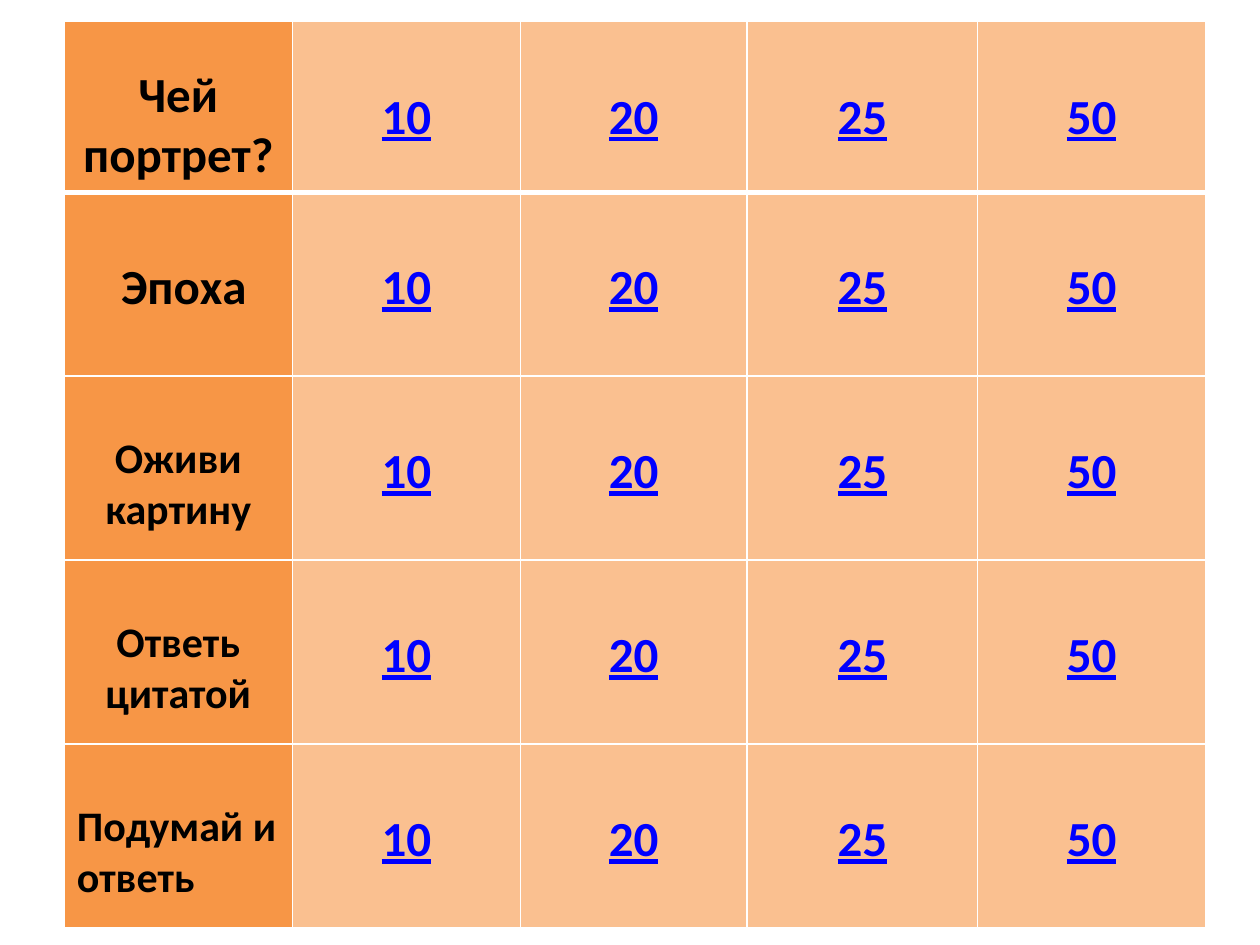
from lxml.etree import SubElement
from pptx import Presentation
from pptx.dml.color import RGBColor
from pptx.enum.text import PP_ALIGN
from pptx.oxml.ns import qn
from pptx.util import Inches, Pt

COLORS = {"category": "F79646", "value": "FAC090", "border": "FFFFFF",
          "text": "000000", "link": "0000FF"}
POINTS = ["10", "20", "25", "50"]
POINTS_SIZE = 28
# category, text size, size of the line left free above it, alignment
CATEGORIES = [
    ("Чей портрет?", 28, 18, PP_ALIGN.CENTER),
    (" Эпоха", 28, 28, PP_ALIGN.CENTER),
    ("Оживи картину", 24, 24, PP_ALIGN.CENTER),
    ("Ответь цитатой", 24, 24, PP_ALIGN.CENTER),
    ("Подумай и ответь", 24, 24, PP_ALIGN.LEFT),
]
COLUMN_WIDTHS = [1.81, 1.81, 1.8, 1.83, 1.81]
ROW_HEIGHTS = [1.3] + [1.46] * 4
LEFT, TOP = 0.51, 0.17
LINE_SPACING = 1.22
CELL_MARGIN = 0.05


def add_borders(cell, top, bottom):
    properties = cell._tc.get_or_add_tcPr()
    for side, width in (("L", 1), ("R", 1), ("T", top), ("B", bottom)):
        line = SubElement(properties, qn(f"a:ln{side}"), w=str(Pt(width)))
        fill = SubElement(line, qn("a:solidFill"))
        SubElement(fill, qn("a:srgbClr"), val=COLORS["border"])


def fill_cell(cell, text, size, free_line, align, fill, color, underline):
    cell.fill.solid()
    cell.fill.fore_color.rgb = RGBColor.from_string(COLORS[fill])
    cell.margin_top = Inches(CELL_MARGIN) + Pt(free_line * LINE_SPACING)
    paragraph = cell.text_frame.paragraphs[0]
    paragraph.alignment = align
    run = paragraph.add_run()
    run.text = text
    font = run.font
    font.name, font.size, font.bold = "Calibri", Pt(size), True
    font.underline = underline
    font.color.rgb = RGBColor.from_string(COLORS[color])


prs = Presentation()
prs.slide_width, prs.slide_height = Inches(10), Inches(7.5)
slide = prs.slides.add_slide(prs.slide_layouts[6])

board = slide.shapes.add_table(
    len(ROW_HEIGHTS), len(COLUMN_WIDTHS), Inches(LEFT), Inches(TOP),
    Inches(sum(COLUMN_WIDTHS)), Inches(sum(ROW_HEIGHTS))).table
board.first_row = board.horz_banding = False
for column, width in zip(board.columns, COLUMN_WIDTHS):
    column.width = Inches(width)
for row, height in zip(board.rows, ROW_HEIGHTS):
    row.height = Inches(height)

for r, (category, size, free_line, align) in enumerate(CATEGORIES):
    for cell in board.rows[r].cells:
        add_borders(cell, top=3 if r == 1 else 1, bottom=3 if r == 0 else 1)
    fill_cell(board.cell(r, 0), category, size, free_line, align,
              "category", "text", False)
    for c, points in enumerate(POINTS, start=1):
        fill_cell(board.cell(r, c), points, POINTS_SIZE, POINTS_SIZE,
                  PP_ALIGN.CENTER, "value", "link", True)

prs.save("out.pptx")
